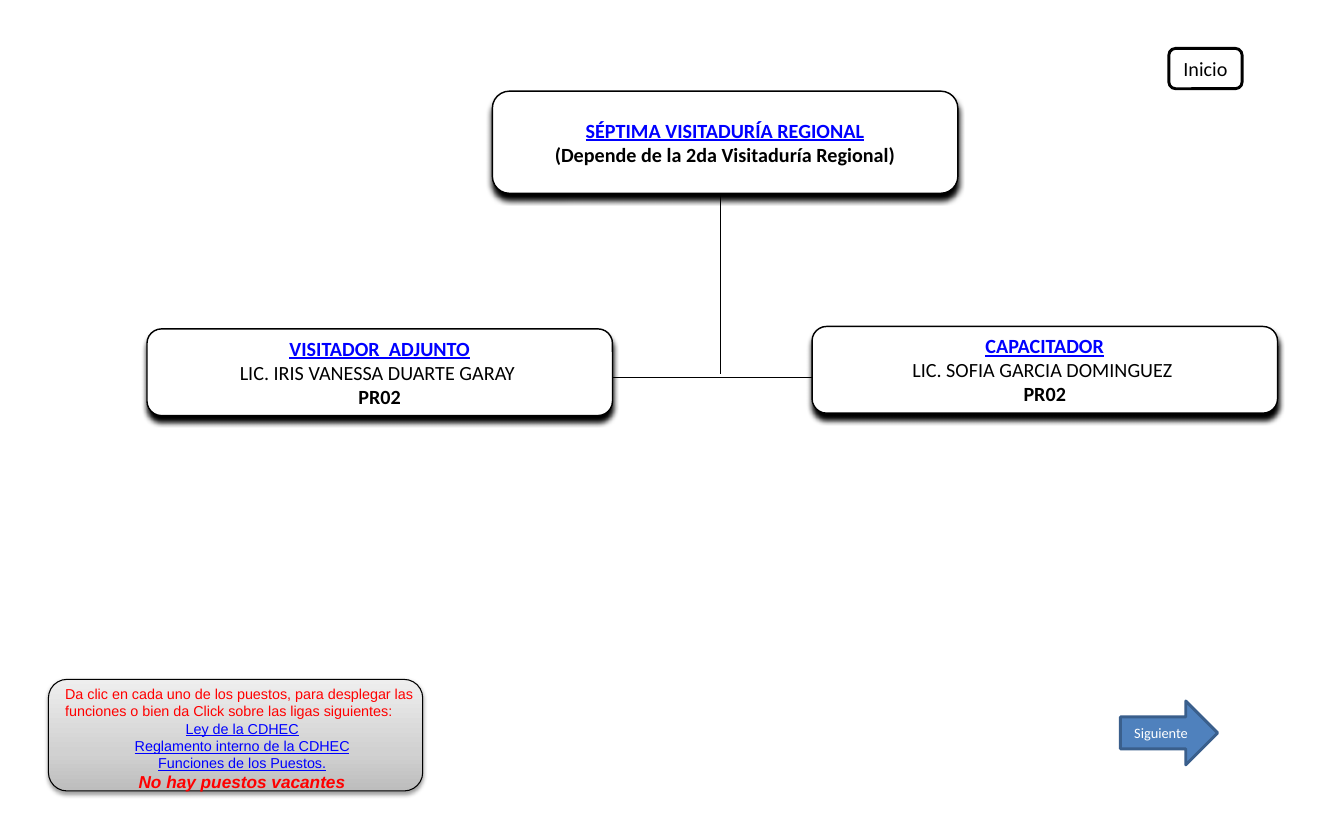
from dataclasses import dataclass

from lxml.etree import SubElement
from pptx import Presentation
from pptx.dml.color import RGBColor as RGB
from pptx.enum.shapes import MSO_CONNECTOR as LINE, MSO_SHAPE as SHAPE
from pptx.enum.text import MSO_ANCHOR as ANCHOR, PP_ALIGN as ALIGN
from pptx.oxml.ns import qn
from pptx.util import Cm, Pt


@dataclass(frozen=True)
class Theme:
    black: str = "000000"
    white: str = "FFFFFF"
    link: str = "0000FF"
    notice: str = "FF0000"
    arrow: str = "4F81BD"
    arrow_edge: str = "3A5F8C"
    grays: tuple = ((0, "BDBDBD"), (35, "D1D1D1"), (100, "EEEEEE"))
    chart_font: str = "Calibri"
    notice_font: str = "Arial"
    large: int = 14
    medium: int = 12
    small: int = 10


def write(paragraph, text, *, font, size, color, bold=False, italic=False,
          underline=False, align=ALIGN.CENTER):
    paragraph.alignment = align
    run = paragraph.add_run()
    run.text = text
    style = run.font
    style.name, style.size = font, Pt(size)
    style.bold, style.italic, style.underline = bold, italic, underline
    style.color.rgb = RGB.from_string(color)


class OrgChart:
    def __init__(self, slide, theme):
        self.slide, self.theme = slide, theme

    def text(self, frame, lines, **base):
        """Write one paragraph per (text, format) pair."""
        for index, (line, style) in enumerate(lines):
            paragraph = frame.add_paragraph() if index else frame.paragraphs[0]
            write(paragraph, line, **{**base, **style})

    def shape(self, kind, place, edge, width, fill=None):
        shape = self.slide.shapes.add_shape(kind, *map(Cm, place))
        shape.shadow.inherit = False
        shape.line.color.rgb = RGB.from_string(edge)
        shape.line.width = Pt(width)
        if fill:
            shape.fill.solid()
            shape.fill.fore_color.rgb = RGB.from_string(fill)
        shape.text_frame.vertical_anchor = ANCHOR.MIDDLE
        return shape

    def shadow(self, shape, opacity, blur, distance):
        effects = shape._element.spPr.find(qn("a:effectLst"))
        outer = SubElement(effects, qn("a:outerShdw"), blurRad=str(Pt(blur)),
                           dist=str(Pt(distance)), dir="5400000", rotWithShape="0")
        color = SubElement(outer, qn("a:srgbClr"), val=self.theme.black)
        SubElement(color, qn("a:alpha"), val=str(opacity * 1000))

    def position(self, left, top, height, title, *details):
        """Box of the chart: a link-styled title over (text, bold) details."""
        t = self.theme
        box = self.shape(SHAPE.ROUNDED_RECTANGLE, (left, top, 11.43, height),
                         t.black, 1, t.white)
        self.shadow(box, 100, 4, 4)
        frame = box.text_frame
        frame.word_wrap = False
        frame.margin_left = frame.margin_right = Cm(0.43)
        frame.margin_top = frame.margin_bottom = Cm(0.23)
        lines = [(title, dict(color=t.link, bold=True, underline=True))]
        lines += [(detail, dict(bold=bold)) for detail, bold in details]
        self.text(frame, lines, font=t.chart_font, size=t.large, color=t.black)

    def button(self, kind, place, label, size, color, edge, fill):
        button = self.shape(kind, place, edge, 2, fill)
        self.text(button.text_frame, [(label, {})],
                  font=self.theme.chart_font, size=size, color=color)

    def link_line(self, *ends):
        line = self.slide.shapes.add_connector(LINE.STRAIGHT, *map(Cm, ends))
        line.line.color.rgb = RGB.from_string(self.theme.black)
        line.line.width = Pt(0.75)
        SubElement(line._element.spPr, qn("a:effectLst"))

    def gradient_panel(self, place):
        panel = self.shape(SHAPE.ROUNDED_RECTANGLE, place, self.theme.black, 0.75)
        panel.fill.gradient()
        panel.fill.gradient_angle = 90
        stops = panel._element.spPr.find(".//" + qn("a:gsLst"))
        stops[:] = []
        for percent, gray in self.theme.grays:
            stop = SubElement(stops, qn("a:gs"), pos=str(percent * 1000))
            SubElement(stop, qn("a:srgbClr"), val=gray)
        self.shadow(panel, 38, 3.1, 1.6)

    def notice(self, place, lines):
        frame = self.slide.shapes.add_textbox(*map(Cm, place)).text_frame
        frame.word_wrap = True
        self.text(frame, lines, font=self.theme.notice_font,
                  size=self.theme.small, color=self.theme.notice)


def main():
    deck = Presentation()
    deck.slide_width, deck.slide_height = Cm(33), Cm(20.02)
    theme = Theme()
    chart = OrgChart(deck.slides.add_slide(deck.slide_layouts[6]), theme)

    # Organisation chart
    chart.link_line(14.71, 9.27, 20.55, 9.27)
    chart.position(12.09, 2.24, 2.51, "SÉPTIMA VISITADURÍA REGIONAL",
                   ("(Depende de la 2da Visitaduría Regional)", True))
    chart.link_line(17.7, 4.8, 17.7, 9.19)
    chart.position(3.61, 8.08, 2.13, "VISITADOR  ADJUNTO",
                   ("LIC. IRIS VANESSA DUARTE GARAY ", False), ("PR02", True))
    chart.position(19.94, 8.02, 2.13, "CAPACITADOR",
                   ("LIC. SOFIA GARCIA DOMINGUEZ ", False), ("PR02", True))

    # Home button
    chart.button(SHAPE.ROUNDED_RECTANGLE, (28.7, 1.19, 1.8, 0.99), "Inicio",
                 theme.large, theme.black, theme.black, theme.white)

    # Instructions
    link = dict(color=theme.link, underline=True)
    chart.gradient_panel((1.19, 16.69, 9.19, 2.74))
    chart.notice((1.35, 16.71, 9.19, 2.9), [
        ("Da clic en cada uno de los puestos, para desplegar las funciones "
         "o bien da Click sobre las ligas siguientes:", dict(align=ALIGN.LEFT)),
        ("Ley de la CDHEC", link),
        ("Reglamento interno de la CDHEC", link),
        ("Funciones de los Puestos.", link),
        ("No hay puestos vacantes", dict(size=theme.medium, bold=True, italic=True)),
    ])

    # Next button
    chart.button(SHAPE.RIGHT_ARROW, (27.51, 17.22, 2.39, 1.57), "Siguiente",
                 theme.small, theme.white, theme.arrow_edge, theme.arrow)

    deck.save("out.pptx")


if __name__ == "__main__":
    main()
